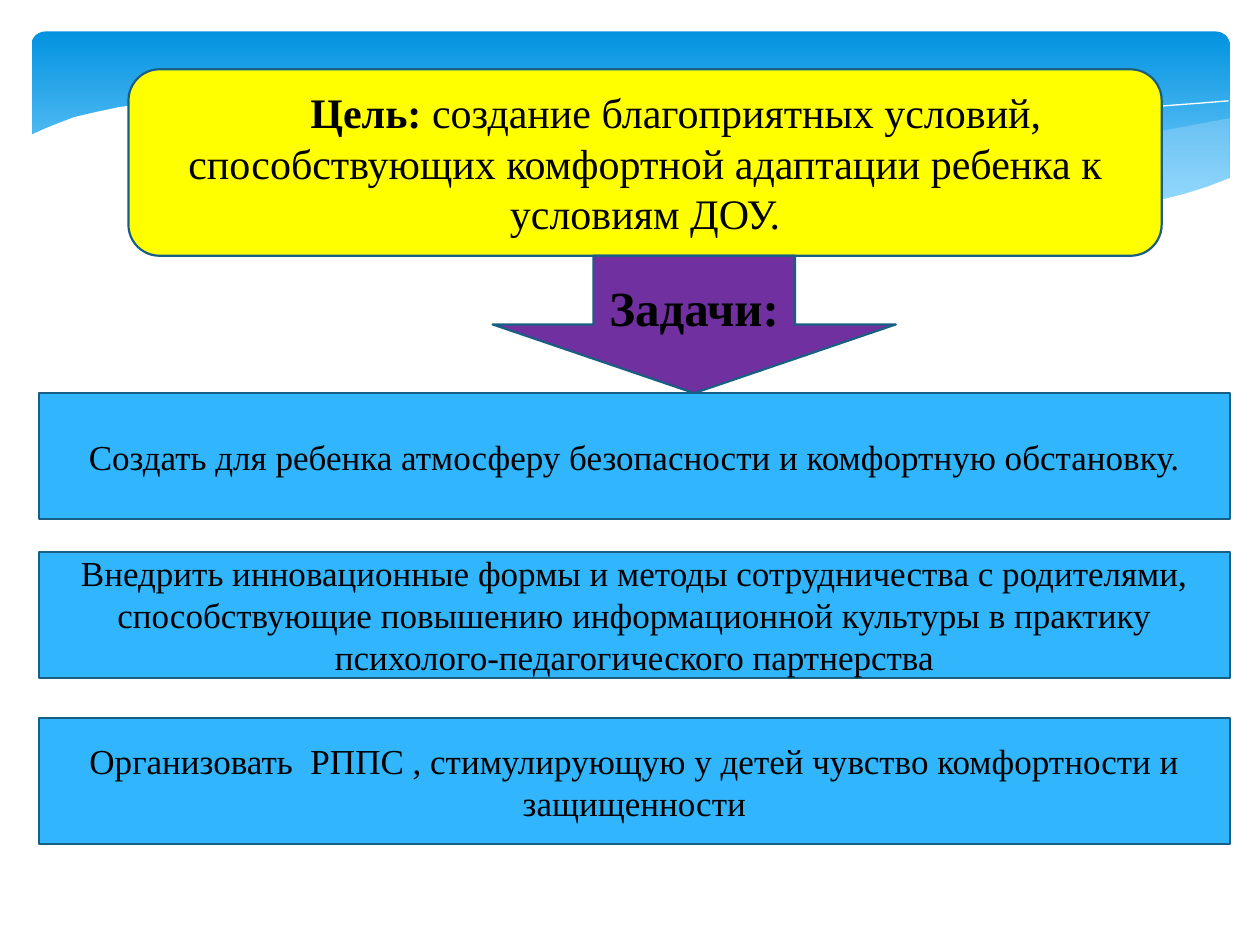
from lxml import etree
from pptx import Presentation
from pptx.dml.color import RGBColor
from pptx.enum.shapes import MSO_SHAPE
from pptx.enum.text import MSO_ANCHOR, PP_ALIGN
from pptx.oxml.ns import qn
from pptx.util import Pt

PX = 9144  # EMU, 100 px to the inch
ROUNDED = MSO_SHAPE.ROUNDED_RECTANGLE
RECTANGLE = MSO_SHAPE.RECTANGLE
DOWN_ARROW = MSO_SHAPE.DOWN_ARROW
MIDDLE = MSO_ANCHOR.MIDDLE
CENTER = PP_ALIGN.CENTER

BLACK = RGBColor(0x00, 0x00, 0x00)
WHITE = RGBColor(0xFF, 0xFF, 0xFF)
YELLOW = RGBColor(0xFF, 0xFF, 0x00)
PURPLE = RGBColor(0x70, 0x30, 0xA0)
SKY = RGBColor(0x31, 0xB6, 0xFD)
OUTLINE = RGBColor(0x19, 0x5F, 0x84)
BANNER_TOP = RGBColor(0x02, 0x93, 0xE0)
BANNER_BOTTOM = RGBColor(0x83, 0xD3, 0xFE)
PALE_BLUE = RGBColor(0xC6, 0xE7, 0xFC)

HIGHLIGHT = [
    (975, 94), (948, 99), (921, 104), (891, 110), (861, 118), (805, 131),
    (753, 143), (706, 152), (661, 160), (691, 164), (719, 167), (745, 169),
    (769, 171), (792, 172), (814, 172), (835, 172), (854, 170), (872, 169),
    (889, 166), (905, 163), (921, 160), (935, 156), (949, 152), (963, 147),
    (976, 141), (976, 94),
]
THIN_CURVE = [
    (613, 151), (653, 141), (695, 130), (748, 117), (806, 104), (836, 99),
    (866, 93), (895, 88), (924, 84), (951, 82), (975, 80),
]
WHITE_WAVE = [
    (977, 141), (959, 148), (940, 154), (920, 159), (899, 164), (875, 167),
    (850, 170), (823, 171), (793, 171), (761, 170), (726, 167), (688, 162),
    (648, 156), (603, 149), (555, 139), (503, 128), (447, 114), (391, 102),
    (340, 92), (292, 85), (250, 81), (211, 78), (177, 78), (146, 79),
    (119, 82), (95, 85), (76, 89), (59, 93), (46, 98), (36, 102), (25, 107),
    (23, 107), (23, 224), (977, 224),
]
TASKS = [
    (312, "Создать для ребенка атмосферу безопасности и комфортную обстановку."),
    (438, "Внедрить инновационные формы и методы сотрудничества с родителями, "
          "способствующие повышению информационной культуры в практику "
          "психолого-педагогического партнерства"),
    (570, "Организовать  РППС , стимулирующую у детей чувство комфортности и защищенности"),
]


def add_outline(points, closed):
    builder = page.shapes.build_freeform(*points[0], scale=PX)
    builder.add_line_segments(points[1:], close=closed)
    shape = builder.convert_to_shape()
    shape.shadow.inherit = False
    return shape


def add_text_shape(kind, bounds, color, size, spans):
    """Add an outlined shape; spans are (text, bold) pairs of one centred paragraph."""
    shape = page.shapes.add_shape(kind, *[value * PX for value in bounds])
    shape.shadow.inherit = False
    shape.fill.solid()
    shape.fill.fore_color.rgb = color
    shape.line.color.rgb = OUTLINE
    shape.line.width = Pt(1.25)
    shape.text_frame.word_wrap = True
    shape.text_frame.vertical_anchor = MIDDLE
    para = shape.text_frame.paragraphs[0]
    para.alignment = CENTER
    for text, bold in spans:
        span = para.add_run()
        span.text = text
        font_format = {"name": "Times New Roman", "size": Pt(size), "bold": bold}
        for name, value in font_format.items():
            setattr(span.font, name, value)
        span.font.color.rgb = BLACK
    return shape


deck = Presentation()
deck.slide_width = 1000 * PX
deck.slide_height = 750 * PX
page = deck.slides.add_slide(deck.slide_layouts[6])

# Banner with its waves
banner = page.shapes.add_shape(ROUNDED, 25 * PX, 25 * PX, 951 * PX, 156 * PX)
banner.shadow.inherit = False
banner.adjustments[0] = 0.07
banner.line.fill.background()
banner.fill.gradient()
banner.fill.gradient_angle = 270
stops = [(0, BANNER_TOP), (0.9, BANNER_BOTTOM)]
for stop, (position, color) in zip(banner.fill.gradient_stops, stops):
    stop.position = position
    stop.color.rgb = color

highlight = add_outline(HIGHLIGHT, True)
highlight.fill.solid()
highlight.fill.fore_color.rgb = PALE_BLUE
highlight.line.fill.background()
color_element = highlight.fill._xPr.find(qn("a:solidFill"))[0]
etree.SubElement(color_element, qn("a:alpha")).set("val", "29000")

thin_curve = add_outline(THIN_CURVE, False)
thin_curve.fill.background()
thin_curve.line.color.rgb = WHITE
thin_curve.line.width = Pt(0)

wave = add_outline(WHITE_WAVE, True)
wave.fill.solid()
wave.fill.fore_color.rgb = WHITE
wave.line.fill.background()

# Goal, arrow and tasks
goal = add_text_shape(ROUNDED, (102, 55, 820, 148), YELLOW, 24, [
    ("Цель: ", True),
    ("создание благоприятных условий, способствующих комфортной адаптации "
     "ребенка к условиям ДОУ.", False),
])
goal_properties = goal.text_frame.paragraphs[0]._p.get_or_add_pPr()
goal_properties.set("indent", str(49 * PX))

add_text_shape(DOWN_ARROW, (391, 203, 320, 109), PURPLE, 28, [("Задачи:", True)])

for top, task in TASKS:
    add_text_shape(RECTANGLE, (31, top, 945, 100), SKY, 20, [(task, False)])

deck.save("out.pptx")
